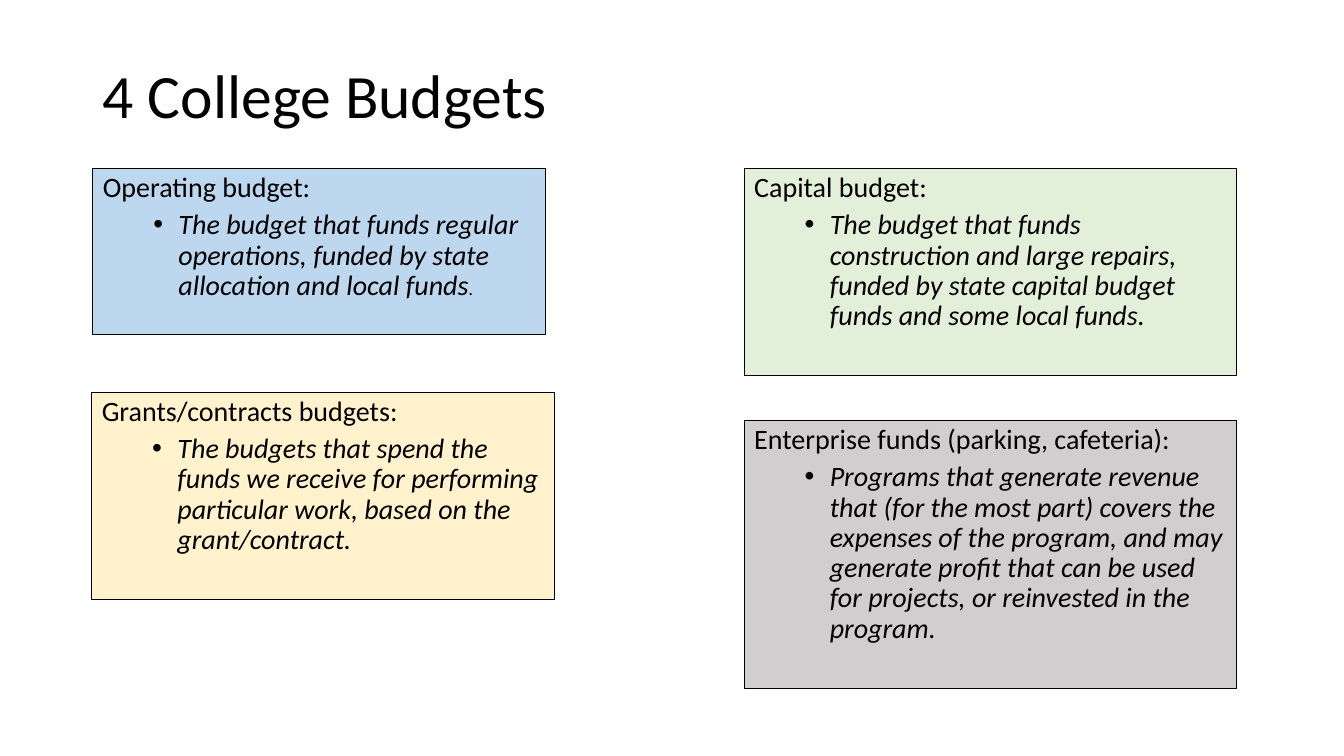
from lxml.etree import SubElement
from pptx import Presentation
from pptx.dml.color import RGBColor
from pptx.enum.text import MSO_ANCHOR, MSO_AUTO_SIZE, PP_ALIGN
from pptx.oxml.ns import qn
from pptx.util import Inches, Pt

COMPARISON_LAYOUT = 4
LEFT_COLUMN, RIGHT_COLUMN = 0.92, 7.38
TOP_ROW = 1.67

# placeholder index, box (left, top, width, height), fill, heading, description runs
BUDGETS = [
    (1, (LEFT_COLUMN, TOP_ROW, 4.49, 1.65), "BDD7EE", "Operating budget:",
     [("The budget that funds regular operations, funded by state allocation "
       "and local funds", 20), (".", 13)]),
    (2, (0.91, 3.89, 4.59, 2.06), "FFF2CC", "Grants/contracts budgets:",
     [("The budgets that spend the funds we receive for performing particular "
       "work, based on the grant/contract.", 20)]),
    (3, (RIGHT_COLUMN, TOP_ROW, 4.88, 2.06), "E2F0D9", "Capital budget:",
     [("The budget that funds construction and large repairs, funded by state "
       "capital budget funds and some local funds.", 20)]),
    (4, (RIGHT_COLUMN, 4.17, 4.88, 2.66), "D0CECE",
     "Enterprise funds (parking, cafeteria):",
     [("Programs that generate revenue that (for the most part) covers the "
       "expenses of the program, and may generate profit that can be used for "
       "projects, or reinvested in the program.", 20)]),
]


def color(hex_string):
    return RGBColor.from_string(hex_string)


class BudgetSlide:
    """Holds the shared style and the slide being filled."""

    font_name = "Calibri"
    ink = "000000"

    def __init__(self, presentation):
        layout = presentation.slide_layouts[COMPARISON_LAYOUT]
        self.slide = presentation.slides.add_slide(layout)

    def place(self, shape, box, anchor):
        shape.left, shape.top, shape.width, shape.height = map(Inches, box)
        text_frame = shape.text_frame
        text_frame.word_wrap = True
        text_frame.auto_size = MSO_AUTO_SIZE.NONE
        text_frame.vertical_anchor = anchor

    def format_run(self, run, size, italic=False):
        font = run.font
        font.name, font.size = self.font_name, Pt(size)
        font.bold, font.italic = False, italic
        font.color.rgb = color(self.ink)

    def format_paragraph(self, paragraph, space_before, bullet=None):
        paragraph.alignment = PP_ALIGN.LEFT
        paragraph.line_spacing = 0.9
        paragraph.space_before = Pt(space_before)
        properties = paragraph._p.get_or_add_pPr()
        properties.set("marL", str(Inches(0.75 if bullet else 0)))
        properties.set("indent", str(Inches(-0.25 if bullet else 0)))
        if bullet:
            SubElement(properties, qn("a:buFont"), typeface="Arial")
            SubElement(properties, qn("a:buChar"), char=bullet)
        else:
            SubElement(properties, qn("a:buNone"))

    def add_title(self, text, box):
        title = self.slide.shapes.title
        self.place(title, box, MSO_ANCHOR.MIDDLE)
        title.text_frame.text = text
        paragraph = title.text_frame.paragraphs[0]
        self.format_paragraph(paragraph, 0)
        self.format_run(paragraph.runs[0], 44)

    def add_budget(self, index, box, fill, heading, description):
        shape = self.slide.placeholders[index]
        self.place(shape, box, MSO_ANCHOR.TOP)
        shape.fill.solid()
        shape.fill.fore_color.rgb = color(fill)
        shape.line.color.rgb = color(self.ink)
        shape.line.width = Pt(0.75)

        shape.text_frame.text = heading
        heading_paragraph = shape.text_frame.paragraphs[0]
        self.format_paragraph(heading_paragraph, 10)
        self.format_run(heading_paragraph.runs[0], 20)

        paragraph = shape.text_frame.add_paragraph()
        paragraph.level = 1
        self.format_paragraph(paragraph, 5, bullet="•")
        for text, size in description:
            run = paragraph.add_run()
            run.text = text
            self.format_run(run, size, italic=True)


def main():
    presentation = Presentation()
    presentation.slide_width = Inches(13.33)
    presentation.slide_height = Inches(7.5)
    budget_slide = BudgetSlide(presentation)
    budget_slide.add_title("4 College Budgets", (LEFT_COLUMN, 0.4, 11.5, 1.15))
    for budget in BUDGETS:
        budget_slide.add_budget(*budget)
    presentation.save("out.pptx")


if __name__ == "__main__":
    main()
